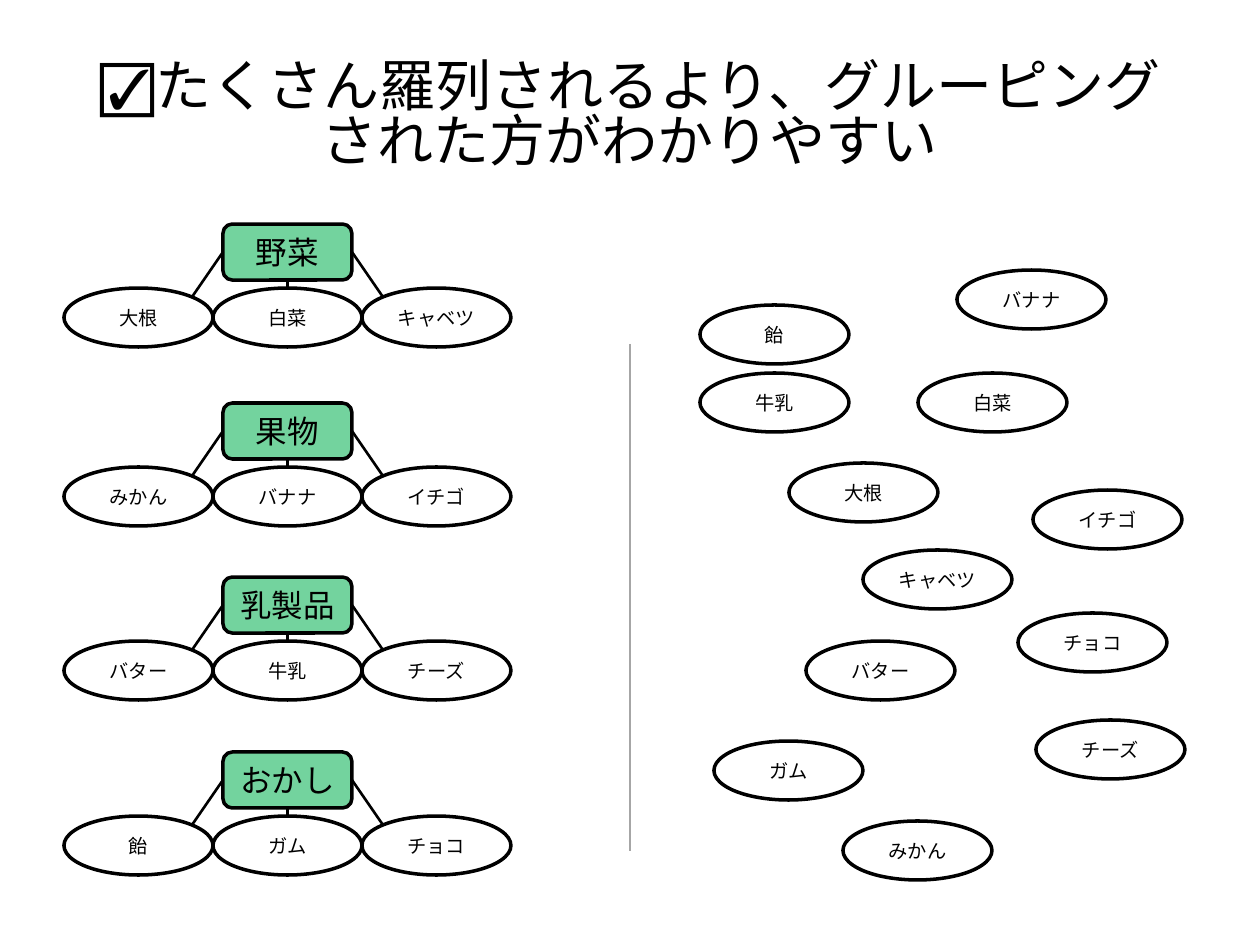
"""Build a slide contrasting grouped items with the same items scattered."""
from dataclasses import dataclass
from typing import Optional

import pptx
import pptx.dml.color
import pptx.enum.shapes
import pptx.enum.text
import pptx.oxml
import pptx.oxml.ns
import pptx.util

RGBColor = pptx.dml.color.RGBColor
MSO_SHAPE = pptx.enum.shapes.MSO_SHAPE
PP_ALIGN = pptx.enum.text.PP_ALIGN
MSO_ANCHOR = pptx.enum.text.MSO_ANCHOR

BLACK = RGBColor(0x00, 0x00, 0x00)
GREEN = RGBColor(0x00, 0xB0, 0x50)
GRAY = RGBColor(0xA6, 0xA6, 0xA6)

PX_PER_INCH = 126
CJK_FONT = "Noto Sans CJK JP"
HEAD_FONT = "Calibri"
OVAL_W, OVAL_H = 149, 59
HEAD_W, HEAD_H = 129, 56
GROUP_LEFT, HEAD_LEFT = 64, 223
HEAD_TO_OVAL = 64
SPOKE_X, SPOKE_Y = 31, 73

FRAME_FORMAT = dict(word_wrap=True, vertical_anchor=MSO_ANCHOR.MIDDLE)
TIGHT_FORMAT = dict(margin_left=0, margin_right=0, margin_top=0, margin_bottom=0)


@dataclass(frozen=True)
class Group:
    top: int
    name: str
    items: tuple[str, ...]


@dataclass(frozen=True)
class Item:
    left: int
    top: int
    name: str


GROUPS = (
    Group(224, "野菜", ("大根", "白菜", "キャベツ")),
    Group(403, "果物", ("みかん", "バナナ", "イチゴ")),
    Group(577, "乳製品", ("バター", "牛乳", "チーズ")),
    Group(752, "おかし", ("飴", "ガム", "チョコ")),
)

SCATTERED = (
    Item(957, 270, "バナナ"),
    Item(700, 305, "飴"),
    Item(700, 373, "牛乳"),
    Item(789, 463, "大根"),
    Item(918, 373, "白菜"),
    Item(1033, 490, "イチゴ"),
    Item(863, 550, "キャベツ"),
    Item(806, 641, "バター"),
    Item(714, 741, "ガム"),
    Item(843, 821, "みかん"),
    Item(1036, 720, "チーズ"),
    Item(1018, 613, "チョコ"),
)


def px(n: int) -> int:
    """Turn pixels into EMU."""
    return round(n * 914400 / PX_PER_INCH)


def set_all(obj, values: dict) -> None:
    """Set every named attribute on an object."""
    for name, value in values.items():
        setattr(obj, name, value)


def write(tf, text: str, size: int, font: str = CJK_FONT,
          line_spacing: Optional[float] = None) -> None:
    """Write one centred paragraph into a text frame."""
    set_all(tf, FRAME_FORMAT)
    p = tf.paragraphs[0]
    set_all(p, dict(alignment=PP_ALIGN.CENTER, line_spacing=line_spacing))
    r = p.add_run()
    r.text = text
    set_all(r.font, dict(name=font, size=pptx.util.Pt(size)))
    r.font.color.rgb = BLACK
    ea = pptx.oxml.parse_xml(
        f'<a:ea {pptx.oxml.ns.nsdecls("a")} typeface="{CJK_FONT}"/>')
    r.font._element.find(pptx.oxml.ns.qn("a:latin")).addnext(ea)


def add_node(s, kind, left: int, top: int, width: int, height: int,
             text: str, size: int, font: str = CJK_FONT):
    """Add an unfilled, outlined shape with centred text."""
    sp = s.shapes.add_shape(kind, px(left), px(top), px(width), px(height))
    sp.shadow.inherit = False
    sp.fill.background()
    sp.line.color.rgb = BLACK
    sp.line.width = pptx.util.Pt(2)
    set_all(sp.text_frame, TIGHT_FORMAT)
    write(sp.text_frame, text, size, font)
    return sp


def add_oval(s, item: Item):
    """Add one item as an ellipse."""
    return add_node(s, MSO_SHAPE.OVAL, item.left, item.top, OVAL_W, OVAL_H,
                    item.name, 11)


def add_head(s, group: Group):
    """Add a group's translucent green heading."""
    sp = add_node(s, MSO_SHAPE.ROUNDED_RECTANGLE, HEAD_LEFT, group.top,
                  HEAD_W, HEAD_H, group.name, 18, HEAD_FONT)
    sp.fill.solid()
    sp.fill.fore_color.rgb = GREEN
    color = sp._element.spPr.find(".//" + pptx.oxml.ns.qn("a:srgbClr"))
    color.append(pptx.oxml.parse_xml(
        f'<a:alpha {pptx.oxml.ns.nsdecls("a")} val="55000"/>'))
    return sp


def add_line(s, x1: int, y1: int, x2: int, y2: int,
             color: RGBColor = BLACK, width: float = 1.5):
    """Add a straight connector without a shadow."""
    c = s.shapes.add_connector(pptx.enum.shapes.MSO_CONNECTOR.STRAIGHT,
                               px(x1), px(y1), px(x2), px(y2))
    c.line.color.rgb = color
    c.line.width = pptx.util.Pt(width)
    c._element.spPr.append(pptx.oxml.parse_xml(
        f'<a:effectLst {pptx.oxml.ns.nsdecls("a")}/>'))
    return c


def add_group(s, group: Group) -> None:
    """Add a heading, its three items and the lines that join them."""
    oval_top = group.top + HEAD_TO_OVAL
    ovals = [add_oval(s, Item(GROUP_LEFT + i * OVAL_W, oval_top, name))
             for i, name in enumerate(group.items)]
    head = add_head(s, group)
    middle = group.top + HEAD_H // 2
    right = HEAD_LEFT + HEAD_W
    for edge, outer, site in ((HEAD_LEFT, HEAD_LEFT - SPOKE_X, 1),
                              (right, right + SPOKE_X, 3)):
        c = add_line(s, outer, group.top + SPOKE_Y, edge, middle)
        c.end_connect(head, site)
    center = HEAD_LEFT + HEAD_W // 2
    c = add_line(s, center, oval_top, center, group.top + HEAD_H)
    c.begin_connect(ovals[1], 0)
    c.end_connect(head, 2)


def main() -> None:
    """Build and save the slide."""
    prs = pptx.Presentation()
    set_all(prs, dict(slide_width=px(1260), slide_height=px(945)))
    s = prs.slides.add_slide(prs.slide_layouts[6])
    title = s.shapes.add_textbox(px(63), px(38), px(1134), px(158))
    write(title.text_frame,
          "☑たくさん羅列されるより、グルーピングされた方がわかりやすい",
          32, line_spacing=0.82)
    add_line(s, 630, 344, 630, 851, GRAY, 1.25)
    for item in SCATTERED:
        add_oval(s, item)
    for group in GROUPS:
        add_group(s, group)
    prs.save("out.pptx")


if __name__ == "__main__":
    main()
